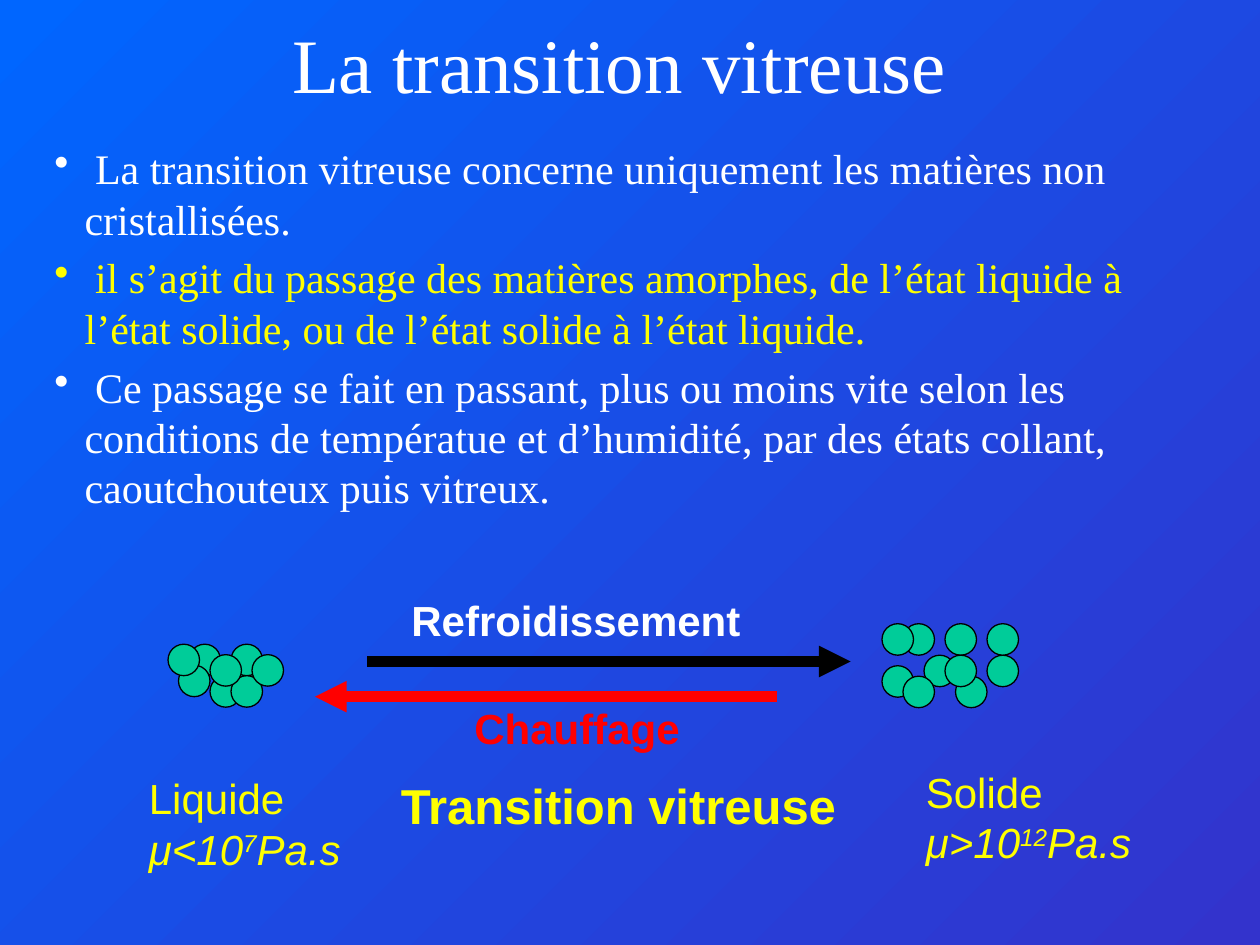
import pptx
import pptx.util
import pptx.dml.color
import pptx.enum.shapes
import pptx.enum.text
import pptx.oxml.ns
import lxml.etree

WHITE, YELLOW, RED, BLACK, GREEN = "FFFFFF", "FFFF00", "FF0000", "000000", "00CC99"
SERIF, SANS = "Times New Roman", "Arial"
LIQUID_BALLS = [(2, 0), (1, 2), (6, 2), (6, 0), (0, 0), (4, 3), (6, 3), (8, 1), (4, 1)]
SOLID_BALLS = [(2, 0), (10, 3), (0, 4), (7, 5), (6, 0), (0, 0), (4, 3), (6, 3), (10, 0), (2, 5)]


def color(hexa):
    """Return the colour of a hex string."""
    return pptx.dml.color.RGBColor.from_string(hexa)


def cells(count):
    """Return the length of a number of grid cells, twelve to the inch."""
    return pptx.util.Inches(count / 12)


def add_xml(parent, tag, **attributes):
    """Append a DrawingML element to a parent."""
    name = pptx.oxml.ns.qn(tag)
    return lxml.etree.SubElement(parent, name, attributes)


class SlideBuilder:
    """Hold the style and the current slide, on a grid of 120 by 90 cells."""

    def __init__(self, deck):
        """Add a title-only slide with a diagonal gradient."""
        self.slide = deck.slides.add_slide(deck.slide_layouts[5])
        self.shapes = self.slide.shapes
        fill = self.slide.background.fill
        fill.gradient()
        fill.gradient_angle = 315
        for stop, hexa in zip(fill.gradient_stops, ("0066FF", "3333CC")):
            stop.color.rgb = color(hexa)

    def place(self, box, at, **frame):
        """Move a box and format its text frame."""
        for name, value in zip(("left", "top", "width", "height"), at):
            setattr(box, name, cells(value))
        for name, value in frame.items():
            setattr(box.text_frame, name, value)

    def add_span(self, para, text, size, hexa, font, **formats):
        """Add a formatted span to a paragraph."""
        span = para.add_run()
        span.text = text
        formats.update(size=pptx.util.Pt(size), name=font)
        for name, value in formats.items():
            setattr(span.font, name, value)
        span.font.color.rgb = color(hexa)
        return span

    def title(self, text, at):
        """Fill the title placeholder."""
        box = self.shapes.title
        self.place(box, at, word_wrap=True, auto_size=pptx.enum.text.MSO_AUTO_SIZE.NONE,
                   vertical_anchor=pptx.enum.text.MSO_ANCHOR.MIDDLE)
        para = box.text_frame.paragraphs[0]
        para.alignment = pptx.enum.text.PP_ALIGN.CENTER
        self.add_span(para, text, 44, WHITE, SERIF)

    def bullets(self, items, at):
        """Add a bulleted list of (text, colour) items."""
        box = self.shapes.add_textbox(0, 0, 0, 0)
        self.place(box, at, word_wrap=True)
        frame = box.text_frame
        for index, (text, hexa) in enumerate(items):
            para = frame.add_paragraph() if index else frame.paragraphs[0]
            para.space_before = pptx.util.Pt(4.8)
            self.add_span(para, text, 24, hexa, SERIF)
            properties = para._p.get_or_add_pPr()
            indent = pptx.util.Inches(0.24)
            properties.set("marL", str(indent))
            properties.set("indent", str(-indent))
            add_xml(properties, "a:buChar", char="•")

    def label(self, text, at, hexa, size=24, wrap=False):
        """Add a bold one-line label."""
        box = self.shapes.add_textbox(0, 0, 0, 0)
        self.place(box, at, word_wrap=wrap)
        self.add_span(box.text_frame.paragraphs[0], text, size, hexa, SANS, bold=True)

    def state(self, name, relation, power, at, wrap=False):
        """Add the name of a state over its viscosity."""
        box = self.shapes.add_textbox(0, 0, 0, 0)
        self.place(box, at, word_wrap=wrap)
        self.add_span(box.text_frame.paragraphs[0], name, 24, YELLOW, SANS)
        para = box.text_frame.add_paragraph()
        for text in (f"μ{relation}10", power, "Pa.s"):
            span = self.add_span(para, text, 24, YELLOW, SANS, italic=True)
            if text == power:
                span.font._element.set("baseline", "30000")

    def balls(self, positions, left, top, grouped=False):
        """Add round particles at cell offsets from a corner."""
        shapes = self.shapes.add_group_shape().shapes if grouped else self.shapes
        for column, row in positions:
            ball = shapes.add_shape(pptx.enum.shapes.MSO_SHAPE.OVAL, cells(left + column),
                                    cells(top + row), cells(3), cells(3))
            ball.shadow.inherit = False
            ball.fill.solid()
            ball.fill.fore_color.rgb = color(GREEN)
            ball.line.color.rgb = color(BLACK)
            ball.line.width = pptx.util.Pt(0.75)

    def arrow(self, start, end, row, hexa):
        """Add a thick horizontal arrow."""
        line = self.shapes.add_connector(pptx.enum.shapes.MSO_CONNECTOR.STRAIGHT,
                                         cells(start), cells(row), cells(end), cells(row))
        line.line.color.rgb = color(hexa)
        line.line.width = pptx.util.Pt(6)
        add_xml(line.line._get_or_add_ln(), "a:tailEnd", type="triangle")
        add_xml(line._element.spPr, "a:effectLst")


def main():
    """Build the slide and save the deck."""
    deck = pptx.Presentation()
    deck.slide_width, deck.slide_height = cells(120), cells(90)
    page = SlideBuilder(deck)
    page.title("La transition vitreuse", (8, 1, 102, 10))
    page.bullets([
        (" La transition vitreuse concerne uniquement les matières non cristallisées.", WHITE),
        (" il s’agit du passage des matières amorphes, de l’état liquide à l’état solide, "
         "ou de l’état solide à l’état liquide.", YELLOW),
        (" Ce passage se fait en passant, plus ou moins vite selon les conditions de "
         "températue et d’humidité, par des états collant, caoutchouteux puis vitreux.", WHITE),
    ], (4, 13, 113, 40))
    page.balls(LIQUID_BALLS, 16, 61.35)
    page.arrow(35, 81, 63, BLACK)
    page.label("Refroidissement", (38, 56, 36, 6), WHITE, wrap=True)
    page.state("Liquide", "<", "7", (13, 73, 21, 10.8))
    page.state("Solide", ">", "12", (87, 72.4, 22.4, 15.6), wrap=True)
    page.label("Transition vitreuse", (37, 73.3, 44.3, 6.8), YELLOW, size=28)
    page.balls(SOLID_BALLS, 84, 59.4, grouped=True)
    page.label("Chauffage", (44, 66.3, 22, 6), RED)
    page.arrow(74, 30, 66.35, RED)
    deck.save("out.pptx")


if __name__ == "__main__":
    main()
